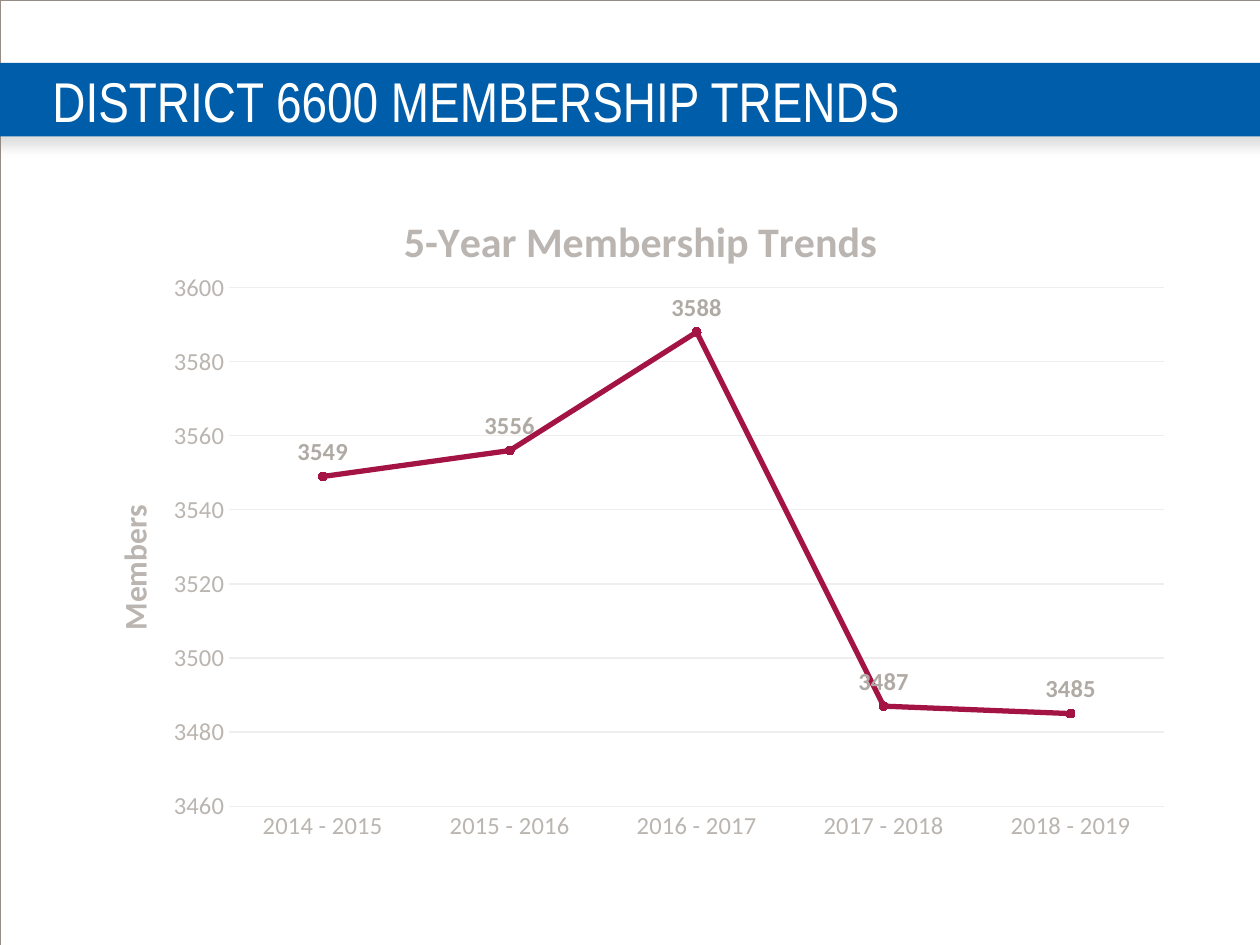
from lxml import etree
from pptx import Presentation
from pptx.chart.data import CategoryChartData
from pptx.dml.color import RGBColor
from pptx.enum.chart import XL_CHART_TYPE, XL_LABEL_POSITION, XL_MARKER_STYLE, XL_TICK_MARK
from pptx.enum.shapes import MSO_SHAPE
from pptx.enum.text import MSO_ANCHOR, MSO_AUTO_SIZE, PP_ALIGN
from pptx.oxml import parse_xml
from pptx.oxml.ns import nsdecls, qn
from pptx.util import Pt

RECTANGLE = MSO_SHAPE.RECTANGLE
LINE_MARKERS = XL_CHART_TYPE.LINE_MARKERS
ABOVE = XL_LABEL_POSITION.ABOVE
CIRCLE = XL_MARKER_STYLE.CIRCLE
NO_TICK = XL_TICK_MARK.NONE
MIDDLE = MSO_ANCHOR.MIDDLE
NO_AUTOFIT = MSO_AUTO_SIZE.NONE
LEFT = PP_ALIGN.LEFT

COLORS = {
    "white": "FFFFFF",
    "band": "005DAA",
    "shadow": "808080",
    "frame": "958D85",
    "axis": "BAB5B0",
    "label": "B0AAA4",
    "grid": "EFEEED",
    "trend": "A31445",
}
YEARS = [f"{year} - {year + 1}" for year in range(2014, 2019)]
MEMBERS = [3549, 3556, 3588, 3487, 3485]


def color(key):
    return RGBColor.from_string(COLORS[key])


def assign(target, values):
    for attribute, value in values.items():
        setattr(target, attribute, value)


class SlideBuilder:
    heading_font = "Arial Narrow"
    chart_font = "Calibri"

    def __init__(self, deck):
        self.slide = deck.slides.add_slide(deck.slide_layouts[5])

    def style_font(self, font, size, key, bold=False, name=chart_font):
        assign(font, {"size": Pt(size), "bold": bold, "name": name})
        font.color.rgb = color(key)

    def style_line(self, line, key, width):
        line.color.rgb = color(key)
        line.width = Pt(width)

    def place(self, shape, box):
        assign(shape, dict(zip(("left", "top", "width", "height"), map(Pt, box))))

    def rectangle(self, box):
        shape = self.slide.shapes.add_shape(RECTANGLE, *map(Pt, box))
        shape.shadow.inherit = False
        return shape

    def frame(self, box):
        frame = self.rectangle(box)
        frame.fill.background()
        self.style_line(frame.line, "frame", 0.13)

    def band(self, box):
        band = self.rectangle(box)
        band.fill.solid()
        band.fill.fore_color.rgb = color("band")
        band.line.fill.background()
        effects = band._element.spPr.find(qn("a:effectLst"))
        effects.append(parse_xml(
            f'<a:outerShdw {nsdecls("a")} blurRad="{Pt(7)}" dist="{Pt(4.8)}" '
            f'dir="5400000" rotWithShape="0"><a:srgbClr val="{COLORS["shadow"]}">'
            '<a:alpha val="25000"/></a:srgbClr></a:outerShdw>'))

    def title(self, text, box):
        title = self.slide.shapes.title
        self.place(title, box)
        margins = dict.fromkeys(
            ("margin_left", "margin_top", "margin_right", "margin_bottom"), 0)
        assign(title.text_frame, {
            **margins, "text": text, "word_wrap": True,
            "auto_size": NO_AUTOFIT, "vertical_anchor": MIDDLE})
        heading = title.text_frame.paragraphs[0]
        heading.alignment = LEFT
        self.style_font(heading.runs[0].font, 32, "white", name=self.heading_font)
        title._element.getparent().append(title._element)

    def layout(self, parent, position, values, target=""):
        for old in parent.findall(qn("c:layout")):
            parent.remove(old)
        layout = etree.Element(qn("c:layout"))
        manual = etree.SubElement(layout, qn("c:manualLayout"))
        if target:
            etree.SubElement(manual, qn("c:layoutTarget")).set("val", target)
        for mode in ("xMode", "yMode"):
            etree.SubElement(manual, qn(f"c:{mode}")).set("val", "edge")
        for side, value in zip("xywh", values):
            etree.SubElement(manual, qn(f"c:{side}")).set("val", str(value))
        parent.insert(position, layout)

    def chart_title(self, title, text, size, corner):
        title.text_frame.text = text
        self.style_font(title.text_frame.paragraphs[0].runs[0].font, size, "axis", True)
        self.layout(title._element, 1, corner)

    def trend_chart(self, box):
        data = CategoryChartData(number_format="General")
        data.categories = YEARS
        data.add_series("Series 1", MEMBERS)
        chart = self.slide.shapes.add_chart(LINE_MARKERS, *map(Pt, box), data).chart
        chart.has_legend = False
        self.style_font(chart.font, 10, "frame")
        self.chart_title(chart.chart_title, "5-Year Membership Trends", 24, (0.29, 0.04))
        plot = chart.plots[0]
        plot.vary_by_categories = False
        self.layout(plot._element.getparent(), 0, (0.14, 0.16, 0.84, 0.76), "inner")
        self.axes(chart)
        self.trend(plot.series[0])

    def axes(self, chart):
        years, members = chart.category_axis, chart.value_axis
        for axis in (years, members):
            assign(axis, {"major_tick_mark": NO_TICK, "minor_tick_mark": NO_TICK})
            self.style_font(axis.tick_labels.font, 14, "axis")
        self.style_line(years.format.line, "grid", 0.75)
        assign(members, {"minimum_scale": 3460, "maximum_scale": 3600,
                         "major_unit": 20, "has_major_gridlines": True})
        members.format.line.fill.background()
        self.style_line(members.major_gridlines.format.line, "grid", 0.75)
        self.chart_title(members.axis_title, "Members", 18, (0.03, 0.47))
        body = members.axis_title.text_frame._txBody.find(qn("a:bodyPr"))
        for name, value in {"rot": "-5400000", "vert": "horz"}.items():
            body.set(name, value)

    def trend(self, series):
        series.smooth = False
        self.style_line(series.format.line, "trend", 3)
        assign(series.marker, {"style": CIRCLE, "size": 5})
        marker = series.marker.format
        marker.fill.solid()
        marker.fill.fore_color.rgb = color("trend")
        self.style_line(marker.line, "trend", 0.75)
        labels = series.data_labels
        assign(labels, {"show_value": True, "position": ABOVE})
        self.style_font(labels.font, 14, "label", True)


def main():
    deck = Presentation()
    assign(deck, {"slide_width": Pt(720), "slide_height": Pt(540)})
    builder = SlideBuilder(deck)
    builder.frame((0, 0, 720, 540))
    builder.band((-6, 36, 732, 42))
    builder.title("DISTRICT 6600 MEMBERSHIP TRENDS", (30, 36, 690, 42))
    builder.trend_chart((42, 102, 636, 390))
    deck.save("out.pptx")


if __name__ == "__main__":
    main()
